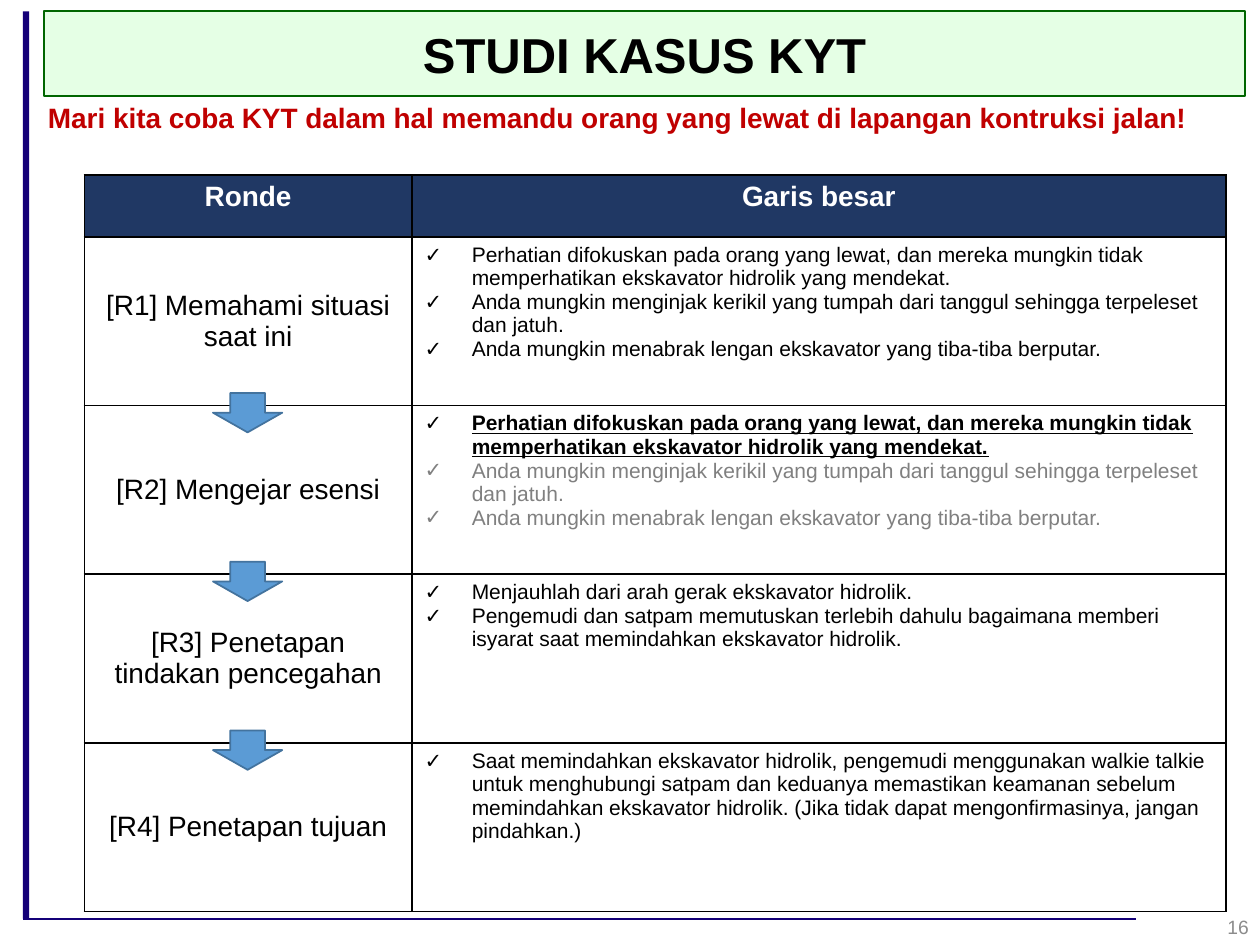
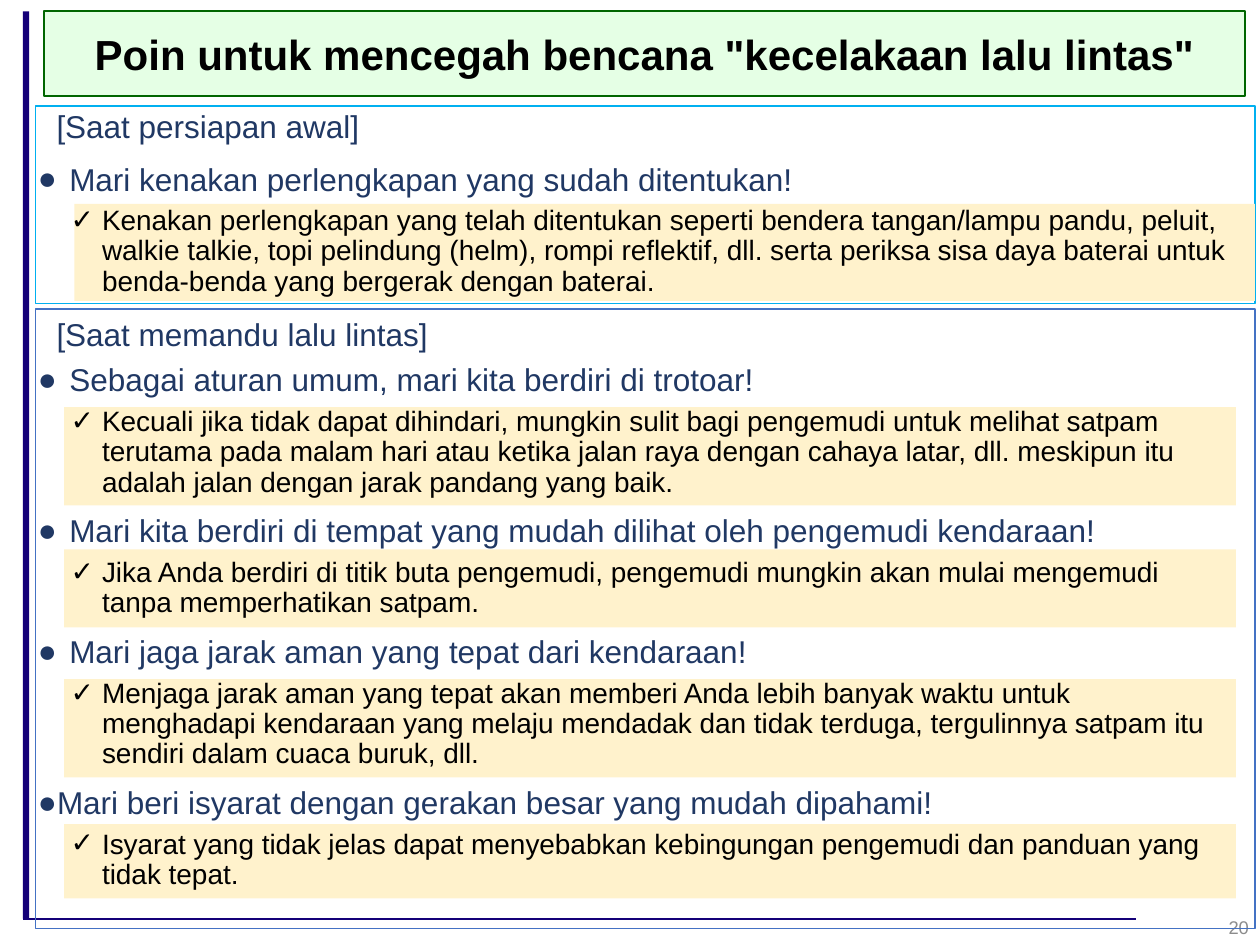
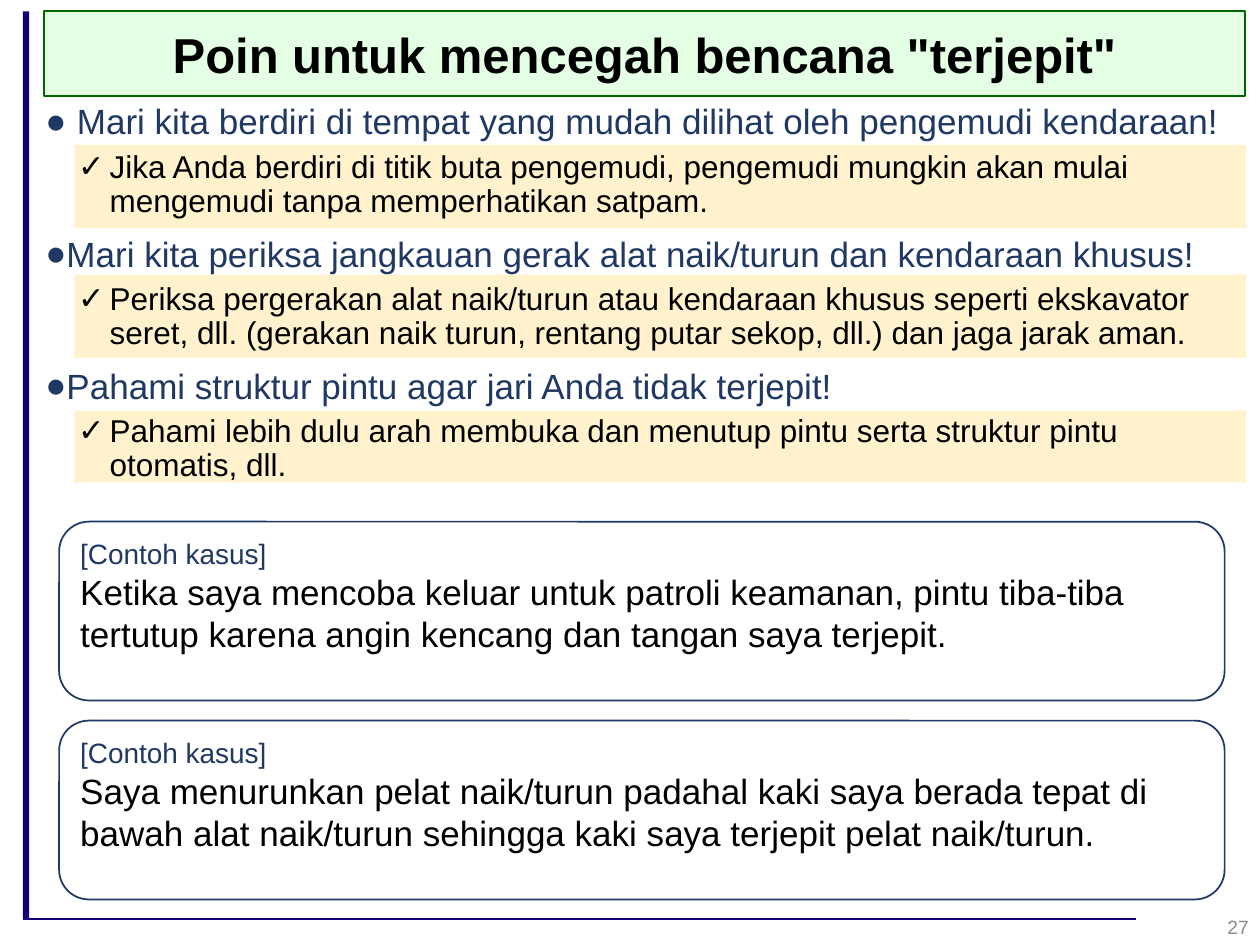
from pptx import Presentation
from pptx.dml.color import RGBColor
from pptx.enum.shapes import MSO_CONNECTOR, MSO_SHAPE
from pptx.enum.text import MSO_ANCHOR, MSO_AUTO_SIZE, PP_ALIGN
from pptx.oxml.ns import qn
from pptx.util import Pt
from lxml.etree import SubElement

FONT = "Arial"
COLORS = {
    "frame": "140078", "title_fill": "CCFFCC", "title_line": "006600",
    "navy": "203864", "red": "C00000", "black": "000000", "white": "FFFFFF",
    "gray": "808080", "number": "8C8C8C", "band": "FFF2CC",
    "arrow": "5B9BD5", "arrow_line": "43739E", "cyan": "00B0F0", "blue": "4472C4",
}
DOT, CHECK = "●", "✓"
WIDE, TIGHT = 18, 11  # gap between a dot and its text


def rgb(name):
    return RGBColor.from_string(COLORS[name])


class Deck:
    """Holds the shared style and the slide being built."""

    def __init__(self):
        self.prs = Presentation()
        self.prs.slide_width, self.prs.slide_height = Pt(720), Pt(540)
        self.s = None

    def new_slide(self, title, number, size=28, number_size=11):
        self.s = self.prs.slides.add_slide(self.prs.slide_layouts[1])
        sp = self.s.shapes.title
        # Frame lines
        bar = self.shape(13, 6.5, 3.6, 518.4, fill="frame")
        rule = self.s.shapes.add_connector(
            MSO_CONNECTOR.STRAIGHT, Pt(13), Pt(525), Pt(649.4), Pt(525))
        self.outline(rule, "frame")
        SubElement(rule._element.spPr, qn("a:effectLst"))
        for item in (bar, rule):
            sp._element.addprevious(item._element)
        # Title band
        self.place(sp, 25.2, 6.5, 686.2, 48.2)
        self.paint(sp, "title_fill", "title_line")
        color = sp._element.spPr.find(qn("a:solidFill"))[0]
        SubElement(color, qn("a:alpha")).set("val", "50000")
        tf = self.frame(sp, MSO_ANCHOR.MIDDLE)
        self.run(tf.paragraphs[0], title, size, bold=True, align=PP_ALIGN.CENTER)
        # Slide number
        self.label(558.7, 515.5, 162, 28.8, str(number), number_size, "number",
                   PP_ALIGN.RIGHT, MSO_ANCHOR.MIDDLE)

    # Formatting
    def place(self, sp, x, y, w, h):
        sp.left, sp.top, sp.width, sp.height = map(Pt, (x, y, w, h))

    def outline(self, sp, color):
        sp.line.color.rgb = rgb(color)
        sp.line.width = Pt(1)

    def paint(self, sp, fill=None, line=None):
        if fill:
            sp.fill.solid()
            sp.fill.fore_color.rgb = rgb(fill)
        else:
            sp.fill.background()
        if line:
            self.outline(sp, line)
        else:
            sp.line.fill.background()

    def frame(self, sp, anchor=MSO_ANCHOR.TOP):
        tf = sp.text_frame
        tf.word_wrap, tf.auto_size = True, MSO_AUTO_SIZE.NONE
        tf.vertical_anchor = anchor
        return tf

    def next_paragraph(self, tf):
        first = tf.paragraphs[0]
        return tf.add_paragraph() if first.runs else first

    def run(self, p, text, size, color="black", bold=False, underline=False,
            align=PP_ALIGN.LEFT):
        p.alignment = align
        r = p.add_run()
        r.text = text
        font = r.font
        font.name, font.size, font.bold, font.underline = FONT, Pt(size), bold, underline
        font.color.rgb = rgb(color)

    def bullet(self, p, char, margin, hang):
        pPr = p._p.get_or_add_pPr()
        pPr.set("marL", str(Pt(margin)))
        pPr.set("indent", str(-Pt(hang)))
        if char:
            SubElement(pPr, qn("a:buFont")).set("typeface", FONT)
            SubElement(pPr, qn("a:buChar")).set("char", char)
        else:
            SubElement(pPr, qn("a:buNone"))

    # Elements
    def shape(self, x, y, w, h, fill=None, line=None, kind=MSO_SHAPE.RECTANGLE):
        sp = self.s.shapes.add_shape(kind, *map(Pt, (x, y, w, h)))
        sp.shadow.inherit = False
        self.paint(sp, fill, line)
        return sp

    def behind_body(self, *args, **kwargs):
        sp = self.shape(*args, **kwargs)
        self.s.placeholders[1]._element.addprevious(sp._element)

    def label(self, x, y, w, h, text, size, color, align=PP_ALIGN.LEFT,
              anchor=MSO_ANCHOR.TOP):
        sp = self.s.shapes.add_textbox(*map(Pt, (x, y, w, h)))
        self.run(self.frame(sp, anchor).paragraphs[0], text, size, color, align=align)

    def body(self, x, y, w, h):
        sp = self.s.placeholders[1]
        self.place(sp, x, y, w, h)
        return self.frame(sp)

    def body_line(self, tf, text, size, color, before=10, char=None, margin=0, hang=0,
                  level=0, bold=False):
        p = self.next_paragraph(tf)
        p.level, p.line_spacing = level, 0.9
        p.space_before, p.space_after = Pt(before), Pt(0)
        self.bullet(p, char, margin, hang)
        self.run(p, text, size, color, bold)

    def points(self, tf, items, size):
        """Each item: heading, explanation, dot gap, space before."""
        for heading, detail, gap, before in items:
            self.body_line(tf, heading, size, "navy", before, DOT, gap, gap)
            self.body_line(tf, detail, size - 2, "black", 5, CHECK, 36.7, 18, level=1)

    def table(self, x, y, widths, heights):
        sp = self.s.shapes.add_table(len(heights), len(widths), Pt(x), Pt(y),
                                     Pt(sum(widths)), Pt(sum(heights)))
        table = sp.table
        table.first_row = table.horz_banding = False
        for col, w in zip(table.columns, widths):
            col.width = Pt(w)
        for row, h in zip(table.rows, heights):
            row.height = Pt(h)
        return table

    def cell(self, cell, fill, anchor=MSO_ANCHOR.TOP):
        cell.vertical_anchor = anchor
        tcPr = cell._tc.get_or_add_tcPr()
        for side in ("lnL", "lnR", "lnT", "lnB"):
            ln = SubElement(tcPr, qn("a:" + side), w=str(Pt(1)))
            color = SubElement(SubElement(ln, qn("a:solidFill")), qn("a:srgbClr"))
            color.set("val", COLORS["black"])
        cell.fill.solid()
        cell.fill.fore_color.rgb = rgb(fill)
        return cell.text_frame

    def case(self, y, text):
        sp = self.shape(33.8, y, 666, 102.2, "white", "navy", MSO_SHAPE.ROUNDED_RECTANGLE)
        tf = self.frame(sp)
        self.run(tf.paragraphs[0], "[Contoh kasus]", 16, "navy")
        self.run(tf.add_paragraph(), text, 20)


def case_study(d):
    d.new_slide("STUDI KASUS KYT", 16)
    tf = d.body(20.2, 56.2, 697, 480)
    d.body_line(tf, "Mari kita coba KYT dalam hal memandu orang yang lewat di lapangan "
                "kontruksi jalan!", 16, "red", bold=True)

    # Rounds table: each outline entry is text plus its emphasis
    passerby = ("Perhatian difokuskan pada orang yang lewat, dan mereka mungkin tidak "
                "memperhatikan ekskavator hidrolik yang mendekat.")
    gravel = ("Anda mungkin menginjak kerikil yang tumpah dari tanggul sehingga "
              "terpeleset dan jatuh.")
    arm = "Anda mungkin menabrak lengan ekskavator yang tiba-tiba berputar."
    plain, key, faded = {}, {"bold": True, "underline": True}, {"color": "gray"}
    rounds = [
        ("[R1] Memahami situasi saat ini", [(passerby, plain), (gravel, plain), (arm, plain)]),
        ("[R2] Mengejar esensi", [(passerby, key), (gravel, faded), (arm, faded)]),
        ("[R3] Penetapan tindakan pencegahan", [
            ("Menjauhlah dari arah gerak ekskavator hidrolik.", plain),
            ("Pengemudi dan satpam memutuskan terlebih dahulu bagaimana memberi isyarat "
             "saat memindahkan ekskavator hidrolik.", plain)]),
        ("[R4] Penetapan tujuan", [
            ("Saat memindahkan ekskavator hidrolik, pengemudi menggunakan walkie talkie "
             "untuk menghubungi satpam dan keduanya memastikan keamanan sebelum "
             "memindahkan ekskavator hidrolik. (Jika tidak dapat mengonfirmasinya, "
             "jangan pindahkan.)", plain)]),
    ]
    row_h = 96.4
    table = d.table(48.2, 100.1, [187.2, 465.1], [35.3] + [row_h] * len(rounds))
    for col, text in enumerate(("Ronde", "Garis besar")):
        tf = d.cell(table.cell(0, col), "navy")
        d.run(tf.paragraphs[0], text, 16, "white", True, align=PP_ALIGN.CENTER)
    for row, (name, outline) in enumerate(rounds, 1):
        tf = d.cell(table.cell(row, 0), "white", MSO_ANCHOR.MIDDLE)
        d.run(tf.paragraphs[0], name, 16, align=PP_ALIGN.CENTER)
        tf = d.cell(table.cell(row, 1), "white")
        for text, emphasis in outline:
            p = d.next_paragraph(tf)
            d.bullet(p, CHECK, 27, 27)
            d.run(p, text, 12, **emphasis)

    # Arrows between rounds
    for i in range(len(rounds) - 1):
        d.shape(121.7, 224.6 + i * row_h, 39.6, 22.5, "arrow", "arrow_line",
                MSO_SHAPE.DOWN_ARROW)


def traffic_points(d):
    d.new_slide('Poin untuk mencegah bencana "kecelakaan lalu lintas"', 20, 24, 10.5)
    # Preparation box and highlight bands
    d.behind_body(20.2, 60.5, 697, 113, line="cyan")
    d.behind_body(42.5, 116.6, 674.6, 55.4, fill="band")
    for y, h in ((232.6, 56.2), (313.9, 44.6), (388.1, 56.2), (470.9, 42.5)):
        d.behind_body(36.7, y, 669.6, h, fill="band")

    tf = d.body(14.4, 90, 697, 454.3)
    d.points(tf, [
        ("Mari kenakan perlengkapan yang sudah ditentukan!",
         "Kenakan perlengkapan yang telah ditentukan seperti bendera tangan/lampu pandu, "
         "peluit, walkie talkie, topi pelindung (helm), rompi reflektif, dll. serta periksa "
         "sisa daya baterai untuk benda-benda yang bergerak dengan baterai.", WIDE, 10),
        ("Sebagai aturan umum, mari kita berdiri di trotoar!",
         "Kecuali jika tidak dapat dihindari, mungkin sulit bagi pengemudi untuk melihat "
         "satpam terutama pada malam hari atau ketika jalan raya dengan cahaya latar, dll. "
         "meskipun itu adalah jalan dengan jarak pandang yang baik.", WIDE, 38.6),
        ("Mari kita berdiri di tempat yang mudah dilihat oleh pengemudi kendaraan!",
         "Jika Anda berdiri di titik buta pengemudi, pengemudi mungkin akan mulai mengemudi "
         "tanpa memperhatikan satpam.", WIDE, 10),
        ("Mari jaga jarak aman yang tepat dari kendaraan!",
         "Menjaga jarak aman yang tepat akan memberi Anda lebih banyak waktu untuk "
         "menghadapi kendaraan yang melaju mendadak dan tidak terduga, tergulinnya satpam "
         "itu sendiri dalam cuaca buruk, dll.", WIDE, 10),
        ("Mari beri isyarat dengan gerakan besar yang mudah dipahami!",
         "Isyarat yang tidak jelas dapat menyebabkan kebingungan pengemudi dan panduan yang "
         "tidak tepat.", TIGHT, 10),
    ], 18)

    # Section labels and guiding box
    d.label(25.2, 57.6, 323.3, 29, "[Saat persiapan awal]", 18, "navy")
    d.label(25.2, 176.4, 294.5, 29, "[Saat memandu lalu lintas]", 18, "navy")
    d.shape(20.2, 176.4, 697, 354.2, line="blue")


def pinching_points(d):
    d.new_slide('Poin untuk mencegah bencana "terjepit"', 27)
    for y, h in ((82.8, 47.5), (157, 47.5), (234.7, 41)):
        d.behind_body(42.5, y, 669.6, h, fill="band")

    tf = d.body(18.7, 56.2, 697, 480)
    d.points(tf, [
        ("Mari kita berdiri di tempat yang mudah dilihat oleh pengemudi kendaraan!",
         "Jika Anda berdiri di titik buta pengemudi, pengemudi mungkin akan mulai mengemudi "
         "tanpa memperhatikan satpam.", WIDE, 10),
        ("Mari kita periksa jangkauan gerak alat naik/turun dan kendaraan khusus!",
         "Periksa pergerakan alat naik/turun atau kendaraan khusus seperti ekskavator seret, "
         "dll. (gerakan naik turun, rentang putar sekop, dll.) dan jaga jarak aman.",
         TIGHT, 10),
        ("Pahami struktur pintu agar jari Anda tidak terjepit!",
         "Pahami lebih dulu arah membuka dan menutup pintu serta struktur pintu otomatis, "
         "dll.", TIGHT, 10),
    ], 20)

    # Example cases
    d.case(298.1, "Ketika saya mencoba keluar untuk patroli keamanan, pintu tiba-tiba "
           "tertutup karena angin kencang dan tangan saya terjepit.")
    d.case(411.8, "Saya menurunkan pelat naik/turun padahal kaki saya berada tepat di bawah "
           "alat naik/turun sehingga kaki saya terjepit pelat naik/turun.")


def main():
    d = Deck()
    case_study(d)
    traffic_points(d)
    pinching_points(d)
    d.prs.save("out.pptx")


if __name__ == "__main__":
    main()
